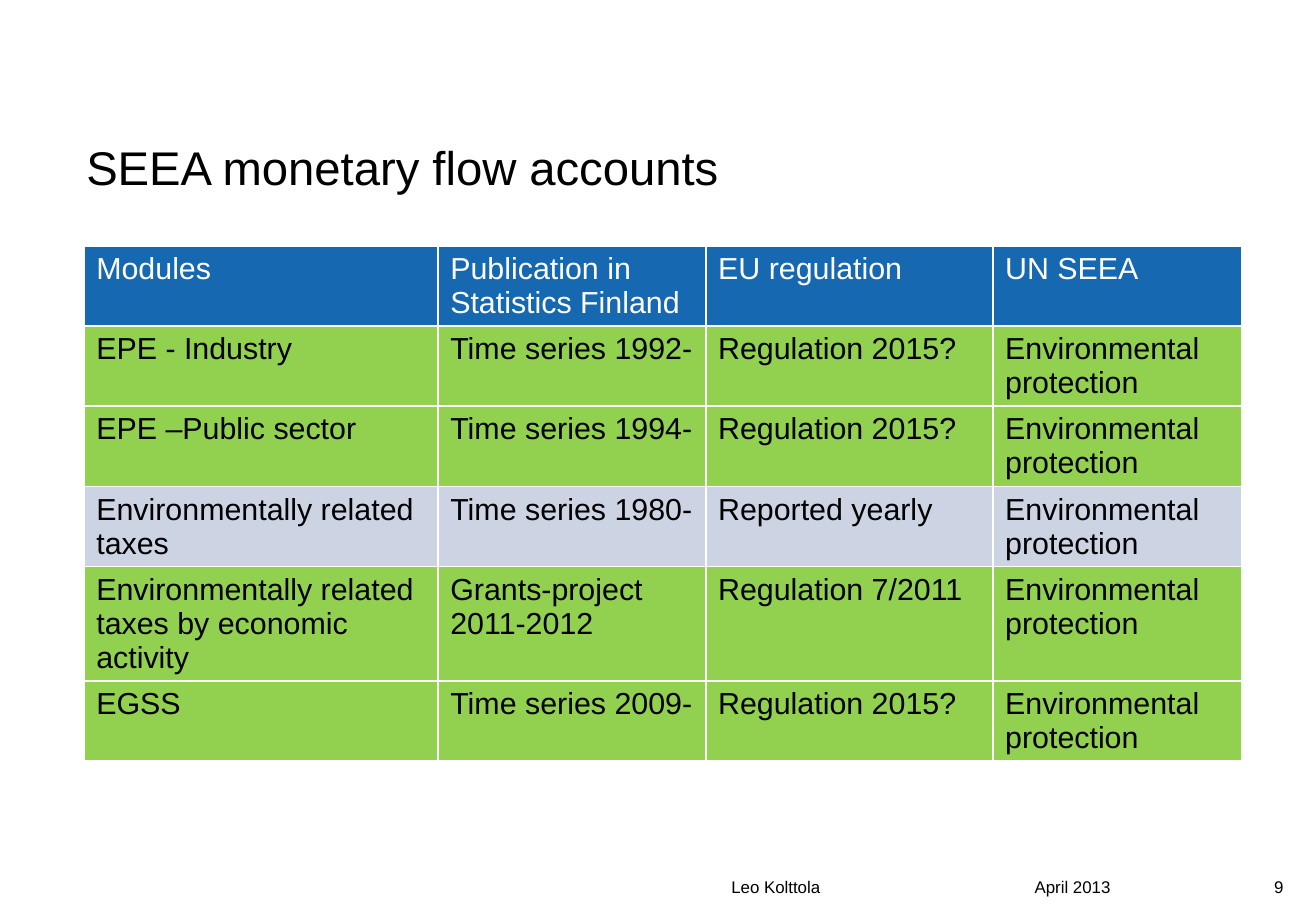
import pptx
import pptx.dml.color
import pptx.enum.text
import pptx.util

Cm = pptx.util.Cm
RGBColor = pptx.dml.color.RGBColor
Align = pptx.enum.text.PP_ALIGN
Anchor = pptx.enum.text.MSO_ANCHOR

BLACK = RGBColor(0x00, 0x00, 0x00)
WHITE = RGBColor(0xFF, 0xFF, 0xFF)
BLUE = RGBColor(0x16, 0x68, 0xB1)
GREEN = RGBColor(0x92, 0xD0, 0x50)
GREY = RGBColor(0xCC, 0xD4, 0xE4)

# Content
TITLE = "SEEA monetary flow accounts"
HEADER = ("Modules", "Publication in Statistics Finland", "EU regulation", "UN SEEA")
PROTECTION = "Environmental protection"
MODULES = [
    ("EPE - Industry", "Time series 1992-", "Regulation 2015?", PROTECTION),
    ("EPE –Public sector", "Time series 1994-", "Regulation 2015?", PROTECTION),
    ("Environmentally related taxes", "Time series 1980-", "Reported yearly", PROTECTION),
    ("Environmentally related taxes by economic activity", "Grants-project 2011-2012",
     "Regulation 7/2011", PROTECTION),
    ("EGSS", "Time series 2009-", "Regulation 2015?", PROTECTION),
]
ROW_FILLS = [BLUE, GREEN, GREEN, GREY, GREEN, GREEN]
ROW_LINES = [2, 2, 2, 2, 3, 2]
COLUMN_WIDTHS = [7.4, 5.6, 6, 5.2]
# Text, left, width, alignment
FOOTERS = [
    ("Leo Kolttola", 15.04, 6.15, Align.LEFT),
    ("April 2013", 21.38, 4.24, Align.LEFT),
    ("9", 25.55, 1.53, Align.RIGHT),
]


def write(frame, text, size=18, color=BLACK, align=Align.LEFT, anchor=Anchor.TOP):
    frame.word_wrap = True
    frame.vertical_anchor = anchor
    para = frame.paragraphs[0]
    para.alignment = align
    span = para.add_run()
    span.text = text
    span.font.name = "Arial"
    span.font.size = pptx.util.Pt(size)
    span.font.bold = False
    span.font.color.rgb = color


def main():
    deck = pptx.Presentation()
    deck.slide_width, deck.slide_height = Cm(27.51), Cm(19.05)
    page = deck.slides.add_slide(deck.slide_layouts[5])

    # Title
    title = page.shapes.title
    title.left, title.top = Cm(1.55), Cm(2.34)
    title.width, title.height = Cm(23.8), Cm(2.3)
    write(title.text_frame, TITLE, size=28, anchor=Anchor.MIDDLE)

    # Table of modules: row height follows the number of text lines
    heights = [Cm(0.25 + 0.71 * lines) for lines in ROW_LINES]
    rows = [HEADER] + MODULES
    table = page.shapes.add_table(
        len(rows), len(HEADER), Cm(1.76), Cm(5.14),
        Cm(sum(COLUMN_WIDTHS)), sum(heights)).table
    for column, width in zip(table.columns, COLUMN_WIDTHS):
        column.width = Cm(width)
    for row, height, texts, fill in zip(table.rows, heights, rows, ROW_FILLS):
        row.height = height
        for cell, text in zip(row.cells, texts):
            cell.fill.solid()
            cell.fill.fore_color.rgb = fill
            write(cell.text_frame, text, color=WHITE if fill == BLUE else BLACK)

    # Footer line
    for text, left, width, align in FOOTERS:
        box = page.shapes.add_textbox(Cm(left), Cm(18.21), Cm(width), Cm(0.8))
        write(box.text_frame, text, size=10, align=align)

    deck.save("out.pptx")


if __name__ == "__main__":
    main()
